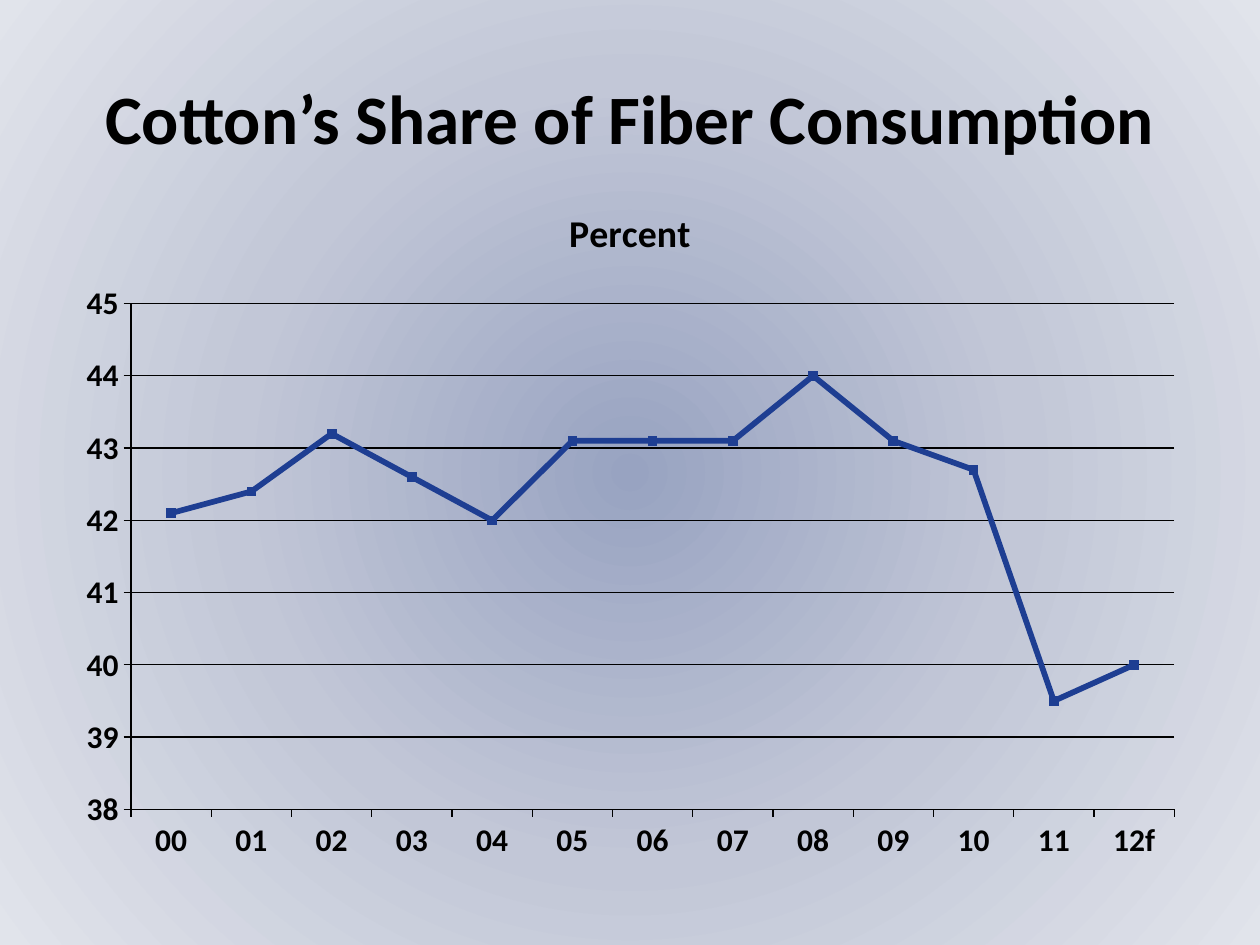
from lxml.etree import SubElement
from pptx import Presentation
from pptx.chart.data import CategoryChartData
from pptx.dml.color import RGBColor
from pptx.enum.chart import XL_CHART_TYPE, XL_MARKER_STYLE, XL_TICK_MARK
from pptx.enum.text import MSO_ANCHOR, PP_ALIGN
from pptx.oxml import parse_xml
from pptx.oxml.ns import nsdecls, qn
from pptx.util import Inches, Pt

FONT = "Calibri"
BLACK = "000000"
BLUE = "1E3E92"
BACKGROUND_STOPS = [(0, "98A3C1"), (50, "C2C7D7"), (100, "E1E4EB")]
YEARS = ["00", "01", "02", "03", "04", "05", "06", "07", "08", "09", "10", "11", "12f"]
COTTON_SHARE = [42.1, 42.4, 43.2, 42.6, 42, 43.1, 43.1, 43.1, 44, 43.1, 42.7, 39.5, 40]


def color(value):
    return RGBColor.from_string(value)


def style_font(font, size, fill=BLACK, bold=True):
    font.name = FONT
    font.size = Pt(size)
    font.bold = bold
    font.color.rgb = color(fill)


def style_line(line, width, fill=BLACK):
    line.width = Pt(width)
    line.color.rgb = color(fill)


def write_text(frame, text, size, fill=BLACK, bold=True, align=PP_ALIGN.CENTER):
    para = frame.paragraphs[0]
    para.alignment = align
    span = para.add_run()
    span.text = text
    style_font(span.font, size, fill, bold)


def set_radial_background(slide, stops):
    """Fill the background with a circular gradient that starts at the centre."""
    stop_xml = "".join(
        f'<a:gs pos="{percent * 1000}"><a:srgbClr val="{value}"/></a:gs>'
        for percent, value in stops
    )
    gradient = parse_xml(
        f'<a:gradFill {nsdecls("a")} rotWithShape="1"><a:gsLst>{stop_xml}</a:gsLst>'
        '<a:path path="circle"><a:fillToRect l="50000" t="50000" r="50000" b="50000"/>'
        "</a:path></a:gradFill>"
    )
    slide.background.fill.solid()
    properties = slide.element.find(".//" + qn("p:bgPr"))
    properties.replace(properties[0], gradient)


def add_heading(slide, text):
    box = slide.shapes.add_textbox(Inches(0.5), Inches(0.3), Inches(9), Inches(1.25))
    frame = box.text_frame
    frame.word_wrap = True
    frame.vertical_anchor = MSO_ANCHOR.MIDDLE
    write_text(frame, text, 39.6)


def place_plot_area(chart, **fractions):
    """Fix the inner plot area, given as fractions of the chart frame."""
    plot_area = chart.element.find(".//" + qn("c:plotArea"))
    for old_layout in plot_area.findall(qn("c:layout")):
        plot_area.remove(old_layout)
    layout = parse_xml(f'<c:layout {nsdecls("c")}/>')
    manual = SubElement(layout, qn("c:manualLayout"))
    settings = {"layoutTarget": "inner", "xMode": "edge", "yMode": "edge", **fractions}
    for name, value in settings.items():
        SubElement(manual, qn(f"c:{name}")).set("val", str(value))
    plot_area.insert(0, layout)


def style_axis(axis):
    axis.major_tick_mark = XL_TICK_MARK.OUTSIDE
    axis.minor_tick_mark = XL_TICK_MARK.NONE
    style_line(axis.format.line, 0.75)
    style_font(axis.tick_labels.font, 18)


def style_series(series):
    series.smooth = False
    style_line(series.format.line, 3.25, BLUE)
    marker = series.marker
    marker.style = XL_MARKER_STYLE.SQUARE
    marker.size = 5
    marker.format.fill.solid()
    marker.format.fill.fore_color.rgb = color(BLUE)
    style_line(marker.format.line, 0.75, BLUE)


def add_share_chart(slide):
    data = CategoryChartData()
    data.categories = YEARS
    data.add_series("Series 1", COTTON_SHARE)
    chart = slide.shapes.add_chart(
        XL_CHART_TYPE.LINE_MARKERS,
        Inches(0.5), Inches(1.42), Inches(9), Inches(5.5), data,
    ).chart
    style_font(chart.font, 18)
    chart.has_legend = False
    chart.has_title = True
    write_text(chart.chart_title.text_frame, "Percent", 21.6)
    chart.chart_title.include_in_layout = False
    place_plot_area(chart, x=0.06, y=0.18, w=0.92, h=0.73)

    style_axis(chart.category_axis)
    values = chart.value_axis
    style_axis(values)
    values.minimum_scale, values.maximum_scale, values.major_unit = 38, 45, 1
    values.tick_labels.number_format = "#,##0"
    values.tick_labels.number_format_is_linked = False
    values.has_major_gridlines = True
    style_line(values.major_gridlines.format.line, 0.75)

    chart.plots[0].vary_by_categories = False
    style_series(chart.plots[0].series[0])


def main():
    deck = Presentation()
    deck.slide_width, deck.slide_height = Inches(10), Inches(7.5)
    page = deck.slides.add_slide(deck.slide_layouts[6])
    set_radial_background(page, BACKGROUND_STOPS)
    add_heading(page, "Cotton’s Share of Fiber Consumption")
    add_share_chart(page)
    deck.save("out.pptx")


if __name__ == "__main__":
    main()
